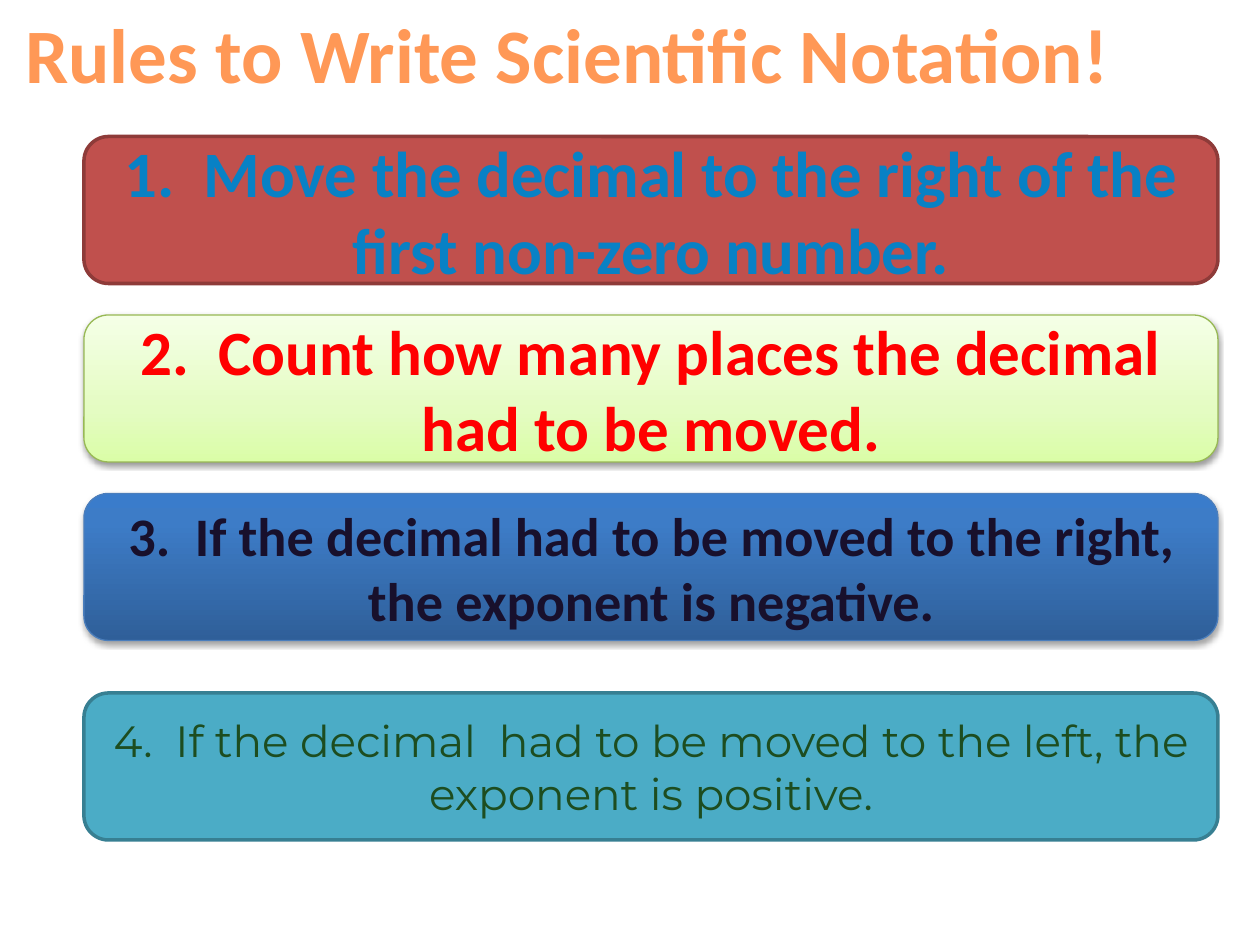
from dataclasses import dataclass
from pptx import Presentation
from pptx.dml.color import RGBColor as Rgb
from pptx.enum.shapes import MSO_SHAPE as Kind
from pptx.enum.text import MSO_ANCHOR as Anchor, MSO_AUTO_SIZE as Auto, PP_ALIGN as Align
from pptx.oxml.ns import qn
from pptx.util import Inches, Pt
from lxml.etree import SubElement as Sub


@dataclass(frozen=True)
class Theme:
    """Colours, type styles and the grid unit of the slide."""
    unit = Inches(1) // 12
    title = dict(name="Calibri", size=Pt(44), bold=True)
    glow = ((0, "9D4700"), (78, "FF9856"), (100, "FFF5F1"))
    lime = ((0, "DAFDA7"), (35, "E4FCC2"), (100, "F5FFE7"))
    navy = ((0, "2F5F99"), (80, "3D7CC7"), (100, "3A7CCB"))


RULES = (
    dict(row=13, fill="C0504D", line="8E3B39", edge=2, ink="0881C5",
         font=dict(name="Calibri", size=Pt(37), bold=True),
         text="1.  Move the decimal to the right of the first non-zero number."),
    dict(row=30, fill=Theme.lime, line="98B955", edge=0.75, ink="FF0000", shade=(38, 1.6),
         font=dict(name="Calibri", size=Pt(36), bold=True),
         text="2.  Count how many places the decimal had to be moved."),
    dict(row=47, fill=Theme.navy, line="4B7EBC", edge=0.75, ink="18102C", shade=(35, 1.8),
         font=dict(name="Calibri", size=Pt(31), bold=True),
         text="3.  If the decimal had to be moved to the right, the exponent is negative."),
    dict(row=66, fill="4BACC6", line="377F92", edge=2, ink="1D4D20",
         font=dict(name="Montserrat", size=Pt(25), bold=False),
         text="4.  If the decimal  had to be moved to the left, the exponent is positive."),
)


def assign(item, values):
    """Set each named attribute of an item."""
    for key, val in values.items():
        setattr(item, key, val)


def place(item, *cells):
    """Put an item at left, top, width and height in grid units."""
    keys = ("left", "top", "width", "height")
    assign(item, {key: round(cell * Theme.unit) for key, cell in zip(keys, cells)})


def paint(fill, tone, angle=270):
    """Fill with one colour or with gradient stops at a clockwise angle."""
    if isinstance(tone, str):
        fill.solid()
        fill.fore_color.rgb = Rgb.from_string(tone)
        return
    fill.gradient()
    fill.gradient_angle = 360 - angle
    stops = fill._xPr.find(qn("a:gradFill")).find(qn("a:gsLst"))
    for old in list(stops):
        stops.remove(old)
    for pos, code in tone:
        stop = Sub(stops, qn("a:gs"), pos=str(pos * 1000))
        Sub(stop, qn("a:srgbClr"), val=code)


def shade(box, alpha, dist):
    """Drop a soft black shadow straight down."""
    effects = box._element.spPr.find(qn("a:effectLst"))
    drop = Sub(effects, qn("a:outerShdw"), blurRad=str(Pt(3.1)), dist=str(Pt(dist)),
               dir="5400000", rotWithShape="0")
    tone = Sub(drop, qn("a:srgbClr"), val="000000")
    Sub(tone, qn("a:alpha"), val=str(alpha * 1000))


def write(frame, text, font, ink, angle=270):
    """Write one centred line of styled text."""
    para = frame.paragraphs[0]
    para.alignment = Align.CENTER
    run = para.add_run()
    run.text = text
    assign(run.font, font)
    paint(run.font.fill, ink, angle)


def add_rule(slide, rule):
    """Add one rule in a rounded box."""
    box = slide.shapes.add_shape(Kind.ROUNDED_RECTANGLE, 0, 0, 0, 0)
    place(box, 8, rule["row"], 108, 14)
    box.shadow.inherit = False
    paint(box.fill, rule["fill"])
    paint(box.line.fill, rule["line"])
    box.line.width = Pt(rule["edge"])
    if "shade" in rule:
        shade(box, *rule["shade"])
    assign(box.text_frame, dict(word_wrap=True, vertical_anchor=Anchor.MIDDLE))
    write(box.text_frame, rule["text"], rule["font"], rule["ink"])


def add_title(slide, text):
    """Fill the title placeholder."""
    title = slide.shapes.title
    place(title, 0.72, 0, 106.68, 10.1)
    assign(title.text_frame, dict(word_wrap=False, auto_size=Auto.SHAPE_TO_FIT_TEXT,
                                  vertical_anchor=Anchor.TOP))
    write(title.text_frame, text, Theme.title, Theme.glow, 90)


def main():
    """Build and save the slide."""
    deck = Presentation()
    assign(deck, dict(slide_width=Inches(10), slide_height=Inches(7.5)))
    slide = deck.slides.add_slide(deck.slide_layouts[5])
    for rule in RULES:
        add_rule(slide, rule)
    add_title(slide, "Rules to Write Scientific Notation!")
    deck.save("out.pptx")


if __name__ == "__main__":
    main()
